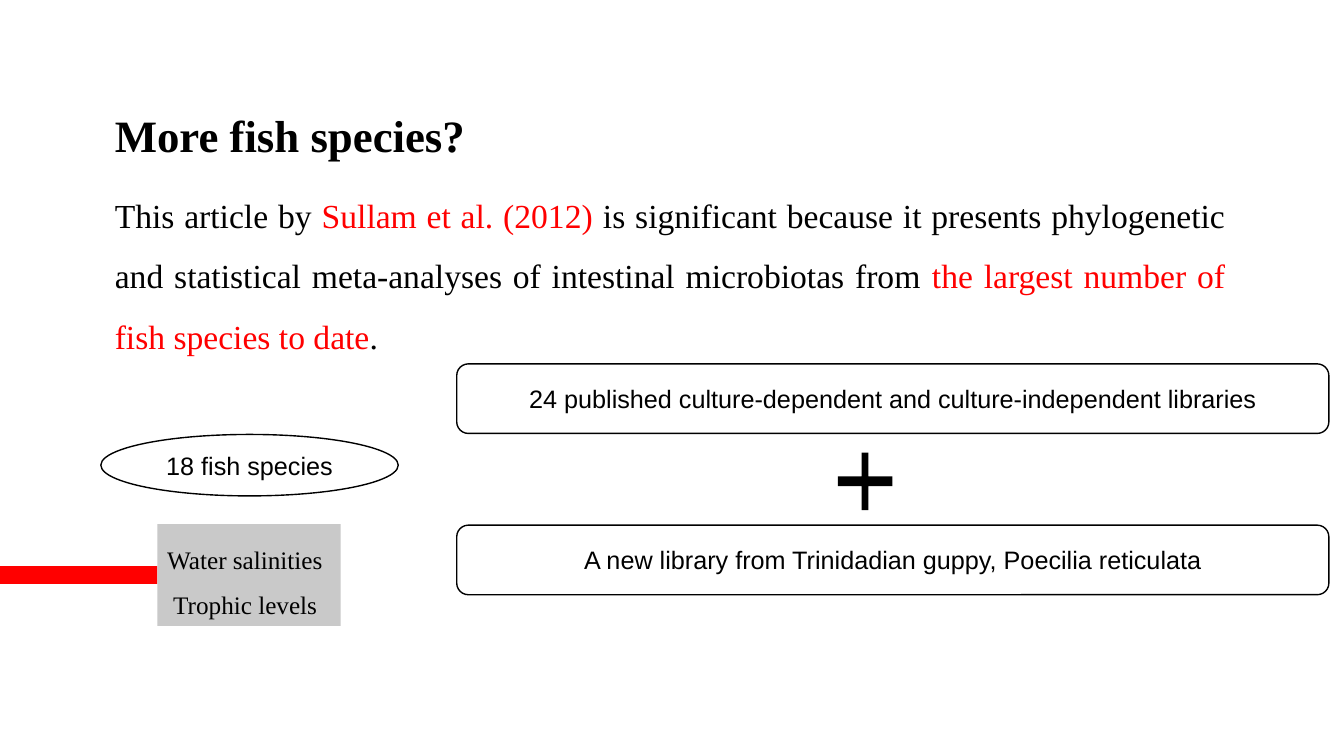
from pptx import Presentation
from pptx.dml.color import RGBColor
from pptx.enum.shapes import MSO_SHAPE
from pptx.enum.text import MSO_ANCHOR, PP_ALIGN
from pptx.util import Pt

PX = 9144  # EMU in one px, 100 px to the inch
BLACK = RGBColor(0, 0, 0)
RED = RGBColor(255, 0, 0)
GRAY = RGBColor(0xC9, 0xC9, 0xC9)

SERIF = "Times New Roman"
TITLE = {"name": SERIF, "size": Pt(32), "bold": True}
BODY = {"name": SERIF, "size": Pt(24)}
NOTE = {"name": SERIF, "size": Pt(18)}
LABEL = {"name": "Arial", "size": Pt(18)}


def scale(*box):
    return [n * PX for n in box]


def add_para(para, runs, style, align=PP_ALIGN.LEFT, gap=1.5, indent=0):
    """Fill a paragraph with (text, colour) runs."""
    para.alignment = align
    para.line_spacing = gap
    if indent:
        para._p.get_or_add_pPr().set("marL", str(indent * PX))
    for text, color in runs:
        run = para.add_run()
        run.text = text
        for key, value in style.items():
            setattr(run.font, key, value)
        run.font.color.rgb = color


def add_text(slide, box, runs, style, align=PP_ALIGN.LEFT):
    frame = slide.shapes.add_textbox(*scale(*box)).text_frame
    frame.word_wrap = True
    add_para(frame.paragraphs[0], runs, style, align)


def add_solid(slide, kind, box, color):
    shape = slide.shapes.add_shape(kind, *scale(*box))
    shape.shadow.inherit = False
    shape.fill.solid()
    shape.fill.fore_color.rgb = color
    shape.line.fill.background()
    return shape


def add_frame(slide, kind, box, text):
    """Add an outlined shape with a centred label."""
    shape = slide.shapes.add_shape(kind, *scale(*box))
    shape.shadow.inherit = False
    shape.fill.background()
    shape.line.color.rgb = BLACK
    shape.line.width = Pt(1)
    shape.text_frame.vertical_anchor = MSO_ANCHOR.MIDDLE
    add_para(shape.text_frame.paragraphs[0], [(text, BLACK)], LABEL,
             PP_ALIGN.CENTER, 1)


def add_factors(slide):
    frame = add_solid(slide, MSO_SHAPE.RECTANGLE, (156, 520, 182, 101),
                      GRAY).text_frame
    frame.word_wrap = False
    frame.vertical_anchor = MSO_ANCHOR.TOP
    add_para(frame.paragraphs[0], [("Water salinities", BLACK)], NOTE)
    add_para(frame.add_paragraph(), [("Trophic levels", BLACK)], NOTE, indent=6)


def main():
    deck = Presentation()
    deck.slide_width, deck.slide_height = scale(1333, 750)
    slide = deck.slides.add_slide(deck.slide_layouts[6])

    add_text(slide, (104, 75, 998, 82), [("More fish species?", BLACK)], TITLE)
    add_text(slide, (104, 168, 1121, 192), [
        ("This article by ", BLACK),
        ("Sullam et al. (2012) ", RED),
        ("is significant because it presents phylogenetic and statistical "
         "meta-analyses of intestinal microbiotas from ", BLACK),
        ("the largest number of fish species to date", RED),
        (".", BLACK),
    ], BODY, PP_ALIGN.JUSTIFY)

    add_frame(slide, MSO_SHAPE.OVAL, (100, 431, 295, 61), "18 fish species")
    sources = [
        "24 published culture-dependent and culture-independent libraries",
        "A new library from Trinidadian guppy, Poecilia reticulata",
    ]
    for row, text in enumerate(sources):
        add_frame(slide, MSO_SHAPE.ROUNDED_RECTANGLE,
                  (453, 361 + 160 * row, 865, 69), text)

    plus = add_solid(slide, MSO_SHAPE.CROSS, (831, 449, 54, 57), BLACK)
    plus.adjustments[0] = 0.44
    add_factors(slide)
    add_solid(slide, MSO_SHAPE.LEFT_ARROW, (-24, 553, 180, 35), RED)

    deck.save("out.pptx")


if __name__ == "__main__":
    main()
